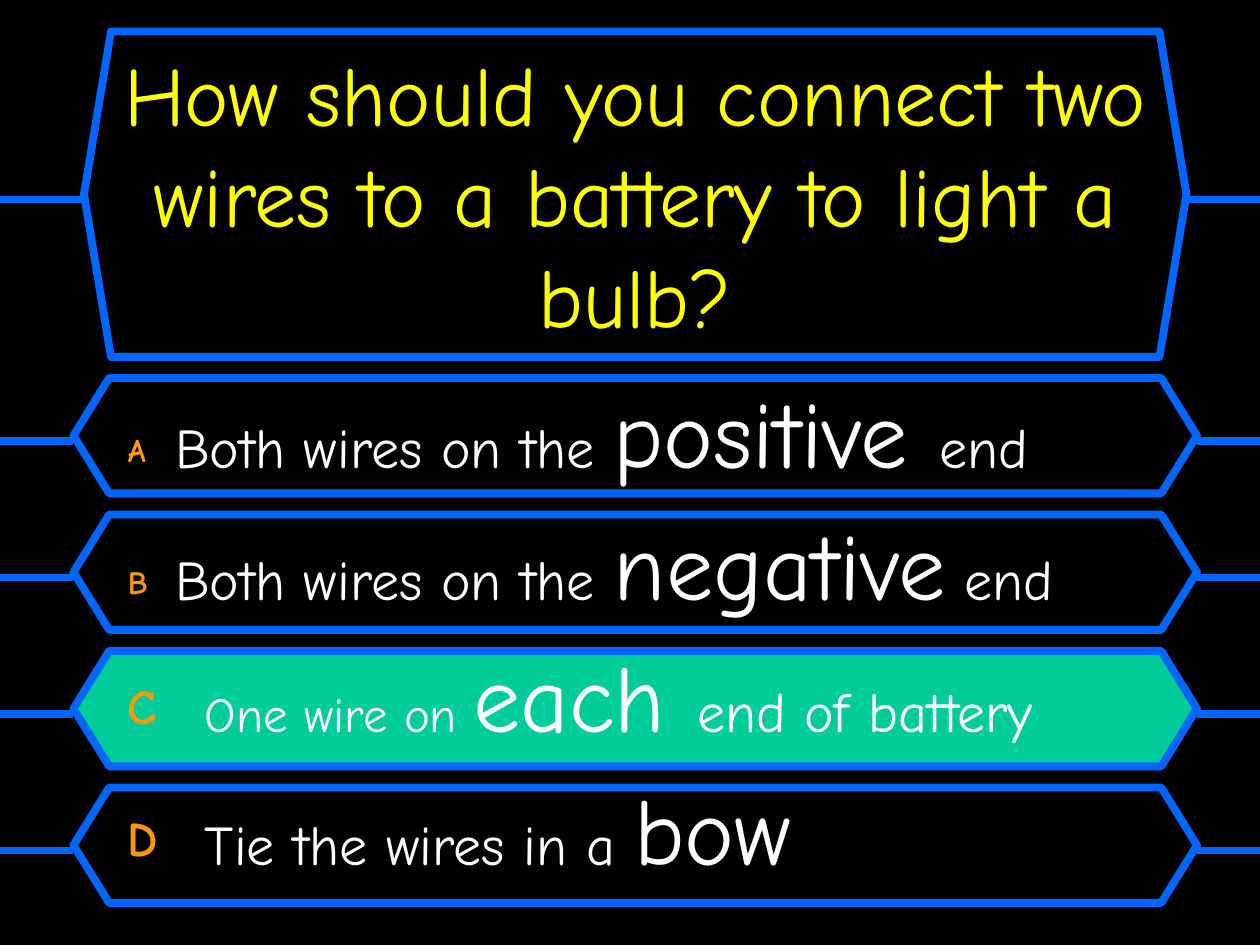
from lxml.etree import SubElement
from pptx import Presentation
from pptx.dml.color import RGBColor
from pptx.enum.shapes import MSO_CONNECTOR as CONNECTOR, MSO_SHAPE as SHAPE
from pptx.enum.text import MSO_ANCHOR as ANCHOR, MSO_AUTO_SIZE as AUTO_SIZE, PP_ALIGN as ALIGN
from pptx.oxml.ns import qn
from pptx.util import Pt

FONT = "Comic Neue"
BLACK, BLUE, GREEN = "000000", "0066FF", "00CC99"
YELLOW, ORANGE, WHITE = "FFFF00", "FF9900", "FFFFFF"
SLIDE_WIDTH, SLIDE_HEIGHT = 720, 540
ROW_TOP, ROW_PITCH = 216, 78

# Letter, letter size, text start, panel fill, (text, size) pieces
ANSWERS = [
    ("A", 32, 27, BLACK, [("Both wires on the ", 32), ("positive ", 54), ("end", 32)]),
    ("B", 32, 27, BLACK, [("Both wires on the ", 32), ("negative", 54), (" end", 32)]),
    ("C", 48, 44, GREEN, [("One wire on ", 28), ("each ", 54), ("end of battery", 32)]),
    ("D", 48, 44, BLACK, [("Tie the wires in a ", 32), ("bow", 54)]),
]


def rgb(value):
    """Turn a hex string into a colour."""
    return RGBColor.from_string(value)


def style_line(line):
    """Give an outline or connector the blue stroke."""
    line.color.rgb = rgb(BLUE)
    line.width = Pt(4.5)


def add_wire(slide, start, end, y):
    """Draw a horizontal wire between a panel and the slide edge."""
    wire = slide.shapes.add_connector(CONNECTOR.STRAIGHT, Pt(start), Pt(y), Pt(end), Pt(y))
    style_line(wire.line)
    SubElement(wire.element.spPr, qn("a:effectLst"))


def add_panel(slide, left, top, width, height, point, wire_y, fill):
    """Draw a hexagonal panel with a wire on each side."""
    panel = slide.shapes.add_shape(SHAPE.HEXAGON, Pt(left), Pt(top), Pt(width), Pt(height))
    panel.adjustments[0] = point
    panel.shadow.inherit = False
    panel.fill.solid()
    panel.fill.fore_color.rgb = rgb(fill)
    style_line(panel.line)
    add_wire(slide, left, 0, wire_y)
    add_wire(slide, SLIDE_WIDTH, left + width, wire_y)


def set_question(slide, text):
    """Place the title over the question panel and format it."""
    title = slide.shapes.title
    title.left, title.top, title.width, title.height = Pt(60), Pt(30), Pt(606), Pt(162)
    title.element.getparent().append(title.element)
    frame = title.text_frame
    frame.text = text
    frame.word_wrap = True
    frame.auto_size = AUTO_SIZE.NONE
    frame.vertical_anchor = ANCHOR.MIDDLE
    question = frame.paragraphs[0]
    question.alignment = ALIGN.CENTER
    question.font.name = FONT
    question.font.size = Pt(48)
    question.font.color.rgb = rgb(YELLOW)


def add_run(paragraph, text, size, colour):
    """Append a piece of text and return its font."""
    run = paragraph.add_run()
    run.text = text
    run.font.size = Pt(size)
    run.font.color.rgb = rgb(colour)
    return run.font


def fill_answer(paragraph, letter, letter_size, text_start, pieces):
    """Write a raised letter, a tab and the answer pieces."""
    tabs = SubElement(paragraph._p.get_or_add_pPr(), qn("a:tabLst"))
    SubElement(tabs, qn("a:tab"), pos=str(Pt(text_start)), algn="l")
    paragraph.font.name = FONT
    letter_font = add_run(paragraph, letter + "\t", letter_size, ORANGE)
    letter_font.bold = True
    letter_font._element.set("baseline", "10000")
    for text, size in pieces:
        add_run(paragraph, text, size, WHITE)


def add_answers(slide):
    """Write all answers in one text box over the panels."""
    frame = slide.shapes.add_textbox(Pt(66), Pt(210), Pt(600), Pt(312)).text_frame
    frame.word_wrap = True
    for index, (letter, letter_size, text_start, _, pieces) in enumerate(ANSWERS):
        answer = frame.add_paragraph() if index else frame.paragraphs[0]
        fill_answer(answer, letter, letter_size, text_start, pieces)
        if index:
            answer.space_before = Pt(10.8)


def main():
    """Build the quiz slide."""
    deck = Presentation()
    deck.slide_width, deck.slide_height = Pt(SLIDE_WIDTH), Pt(SLIDE_HEIGHT)
    slide = deck.slides.add_slide(deck.slide_layouts[5])
    slide.background.fill.solid()
    slide.background.fill.fore_color.rgb = rgb(BLACK)
    add_panel(slide, 48, 18, 630, 186, 0.083, 114, BLACK)
    for index, (_, _, _, fill, _) in enumerate(ANSWERS):
        top = ROW_TOP + index * ROW_PITCH
        add_panel(slide, 42, top, 642, 66, 0.309, top + 36, fill)
    set_question(slide, "How should you connect two wires to a battery to light a bulb?")
    add_answers(slide)
    deck.save("out.pptx")


if __name__ == "__main__":
    main()
